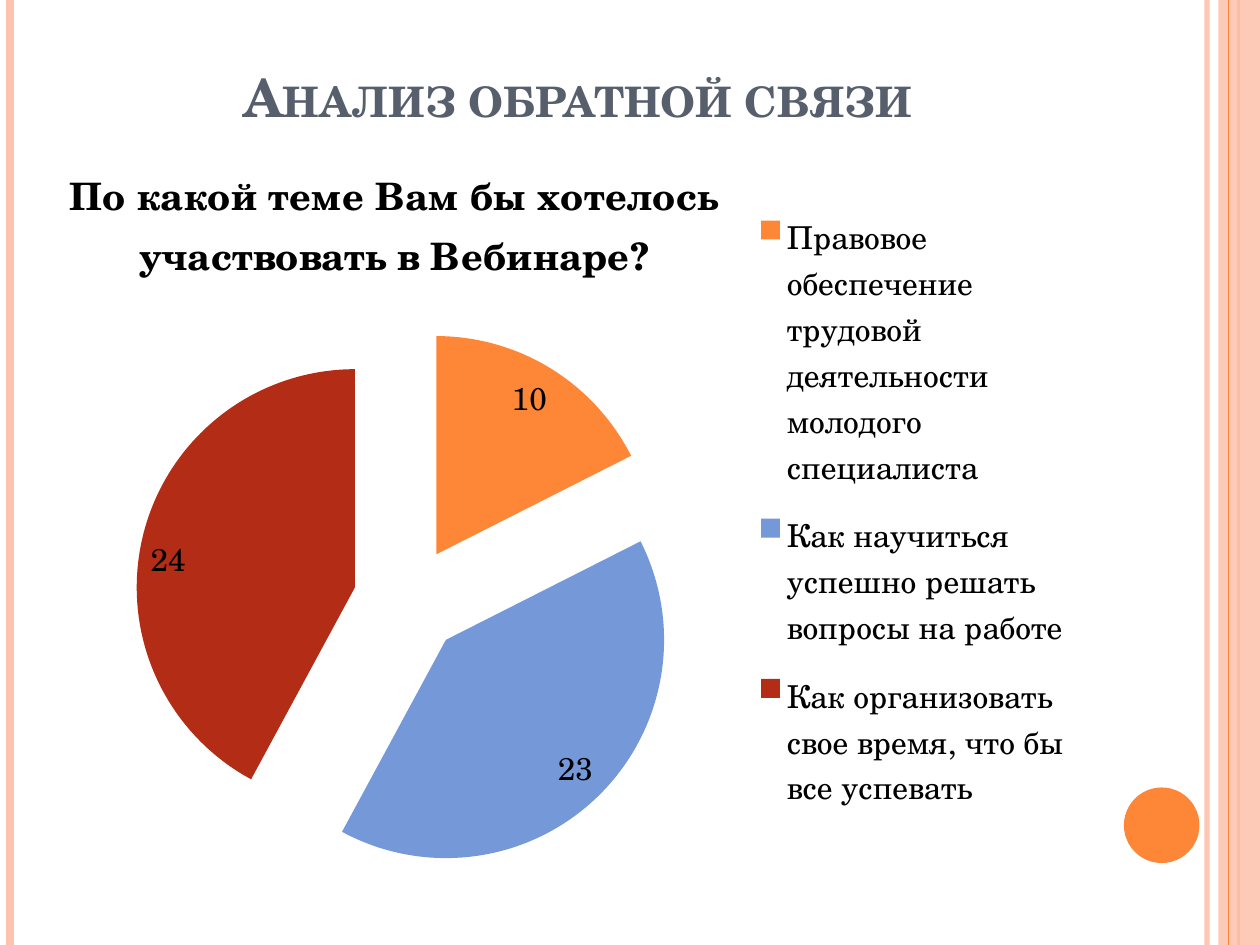
"""Builds a feedback analysis slide with an exploded pie chart."""
from lxml import etree
from pptx import Presentation
from pptx.chart.data import CategoryChartData
from pptx.dml.color import RGBColor
from pptx.enum.chart import XL_CHART_TYPE, XL_LABEL_POSITION, XL_LEGEND_POSITION
from pptx.enum.shapes import MSO_CONNECTOR, MSO_SHAPE
from pptx.enum.text import MSO_ANCHOR, PP_ALIGN
from pptx.oxml.ns import qn
from pptx.util import Inches, Pt

PIE = XL_CHART_TYPE.PIE_EXPLODED
INSIDE_END = XL_LABEL_POSITION.INSIDE_END
RIGHT = XL_LEGEND_POSITION.RIGHT
STRAIGHT = MSO_CONNECTOR.STRAIGHT
RECTANGLE, OVAL = MSO_SHAPE.RECTANGLE, MSO_SHAPE.OVAL
BOTTOM, CENTER = MSO_ANCHOR.BOTTOM, PP_ALIGN.CENTER
TITLE_ONLY = 5

FONT = "TeX Gyre Schola"
ORANGE, PEACH, BLUE, RED = "FE8637", "FEC3AE", "7598D9", "B32C16"
SLATE, BLACK = "575F6D", "000000"
COLUMN, ROW = Inches(1), Inches(1)

ANSWERS = [
    ("Правовое обеспечение трудовой деятельности молодого специалиста", 10, ORANGE),
    ("Как научиться успешно решать вопросы на работе", 23, BLUE),
    ("Как организовать свое время, что бы все успевать", 24, RED),
]


def color(value):
    return RGBColor.from_string(value)


def set_opacity(element, percent):
    for tone in element.iter(qn("a:srgbClr")):
        etree.SubElement(tone, qn("a:alpha"), val=str(percent * 1000))


def set_layout(element, follower, **shares):
    for old in element.findall(qn("c:layout")):
        element.remove(old)
    layout = etree.Element(qn("c:layout"))
    manual = etree.SubElement(layout, qn("c:manualLayout"))
    if follower == "c:pieChart":
        etree.SubElement(manual, qn("c:layoutTarget"), val="inner")
    for axis in "xy":
        etree.SubElement(manual, qn(f"c:{axis}Mode"), val="edge")
    for name, share in shares.items():
        etree.SubElement(manual, qn(f"c:{name}"), val=str(share))
    element.find(qn(follower)).addprevious(layout)


class Page:
    """Holds the slide and its style on a grid of 10 columns by 7.5 rows."""

    def __init__(self, deck):
        self.slide = deck.slides.add_slide(deck.slide_layouts[TITLE_ONLY])
        self.shapes = self.slide.shapes
        self.height = deck.slide_height

    def place(self, left, top, width, height):
        return (int(left * COLUMN), int(top * ROW),
                int(width * COLUMN), int(height * ROW))

    def style(self, font, size, tone, bold=False):
        font.name, font.size, font.bold = FONT, Pt(size), bold
        font.color.rgb = color(tone)

    def stripe(self, column, tone, width, opacity=100):
        x = int(column * COLUMN)
        line = self.shapes.add_connector(STRAIGHT, x, 0, x, self.height)
        line.line.color.rgb = color(tone)
        line.line.width = Pt(width)
        properties = line._element.spPr
        if opacity < 100:
            set_opacity(properties, opacity)
        etree.SubElement(properties, qn("a:effectLst"))

    def block(self, kind, area, tone, opacity=100):
        shape = self.shapes.add_shape(kind, *self.place(*area))
        shape.shadow.inherit = False
        shape.fill.solid()
        shape.fill.fore_color.rgb = color(tone)
        shape.line.fill.background()
        if opacity < 100:
            set_opacity(shape._element.spPr, opacity)

    def title(self, text, area):
        title = self.shapes.title
        title.left, title.top, title.width, title.height = self.place(*area)
        frame = title.text_frame
        frame.text = text
        frame.vertical_anchor = BOTTOM
        para = frame.paragraphs[0]
        para.alignment = CENTER
        span = para.runs[0]
        self.style(span.font, 30, SLATE, bold=True)
        span.font._element.set("cap", "small")

    def pie(self, heading, answers, area):
        names, values, tones = zip(*answers)
        data = CategoryChartData()
        data.categories = names
        data.add_series("Series 1", values)
        chart = self.shapes.add_chart(PIE, *self.place(*area), data).chart
        self.style(chart.font, 18, BLACK)

        chart.has_title = True
        chart.chart_title.include_in_layout = False
        frame = chart.chart_title.text_frame
        frame.text = heading
        self.style(frame.paragraphs[0].runs[0].font, 21.6, BLACK, bold=True)
        set_layout(chart.chart_title._element, "c:overlay", x=0, y=0)

        chart.has_legend = True
        chart.legend.position = RIGHT
        chart.legend.include_in_layout = False
        set_layout(chart.legend._element, "c:overlay",
                   x=0.66, y=0.05, w=0.33, h=0.87)

        plot = chart.plots[0]
        plot.vary_by_categories = True
        plot.has_data_labels = True
        labels = plot.data_labels
        labels.show_value = True
        labels.show_percentage = False
        labels.position = INSIDE_END
        self.style(labels.font, 18, BLACK)
        set_layout(plot._element.getparent(), "c:pieChart",
                   x=0.07, y=0.23, w=0.53, h=0.75)

        series = plot.series[0]
        for index, tone in enumerate(tones):
            fill = series.points[index].format.fill
            fill.solid()
            fill.fore_color.rgb = color(tone)
        element = series._element
        for old in element.findall(qn("c:explosion")):
            element.remove(old)
        explosion = etree.Element(qn("c:explosion"), val="25")
        element.find(qn("c:dPt")).addprevious(explosion)


def main():
    deck = Presentation()
    deck.slide_width, deck.slide_height = Inches(10), Inches(7.5)
    page = Page(deck)
    page.stripe(9.58, PEACH, 3, opacity=93)
    page.stripe(0.08, PEACH, 4.5)
    page.stripe(9.83, ORANGE, 1.5)
    page.block(RECTANGLE, (9.67, 0, 0.33, 7.5), PEACH, opacity=87)
    page.stripe(9.75, ORANGE, 0.75)
    page.block(OVAL, (8.92, 6.25, 0.6, 0.6), ORANGE)
    page.title("Анализ обратной связи", (0.5, 0.3, 8.17, 0.77))
    page.pie("По какой теме Вам бы хотелось участвовать в Вебинаре?",
             ANSWERS, (0.5, 1.23, 8.17, 5.85))
    deck.save("out.pptx")


if __name__ == "__main__":
    main()
